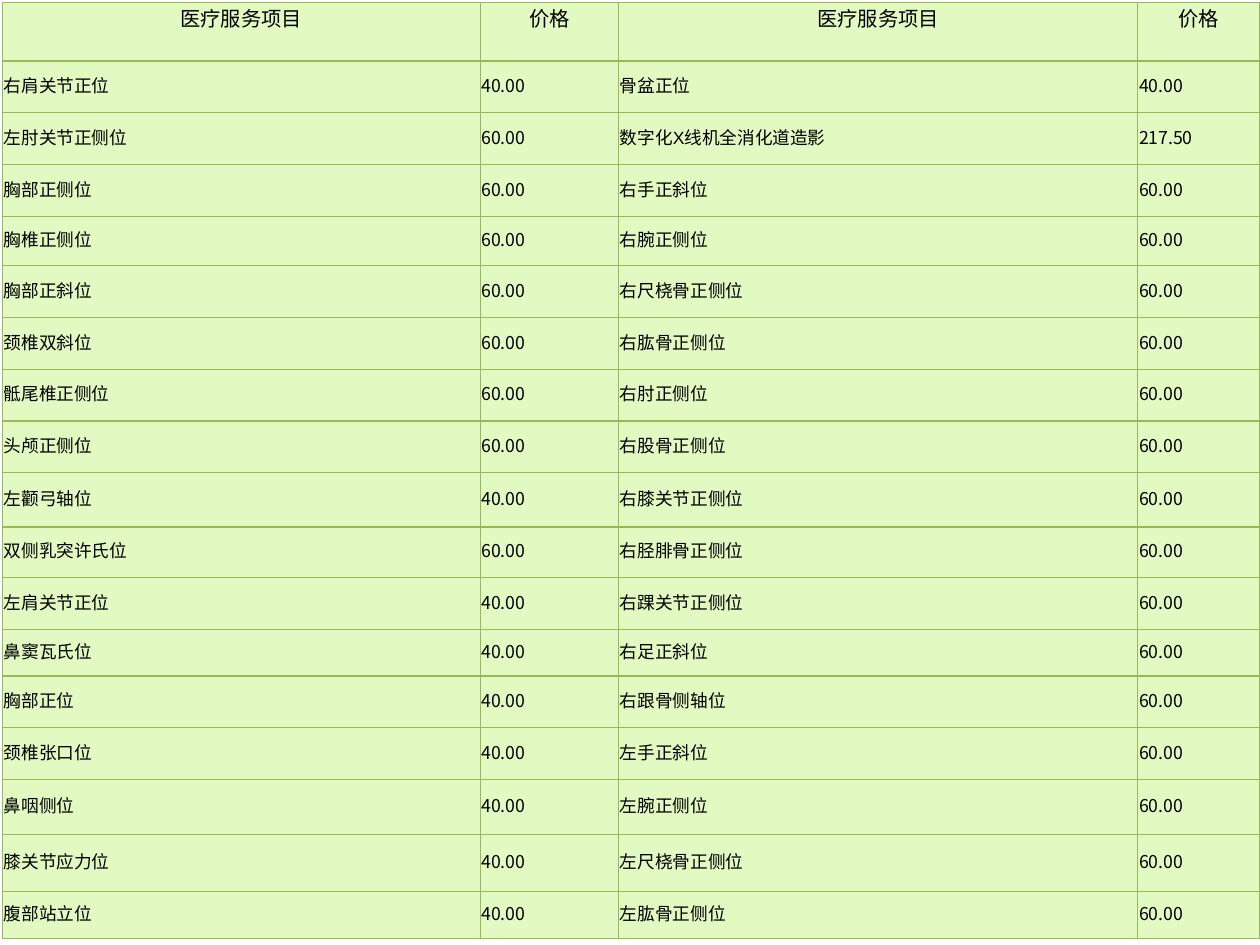
"""Build a price list slide for X-ray examinations."""
from dataclasses import dataclass

from lxml import etree
from pptx import Presentation
from pptx.dml.color import RGBColor
from pptx.enum.text import MSO_ANCHOR, PP_ALIGN
from pptx.oxml.ns import qn
from pptx.util import Pt

CENTER, LEFT = PP_ALIGN.CENTER, PP_ALIGN.LEFT
TOP, MIDDLE = MSO_ANCHOR.TOP, MSO_ANCHOR.MIDDLE
BLANK_LAYOUT = 6

HEADINGS = ("医疗服务项目", "价格") * 2
PRICES = [
    ("右肩关节正位", "40.00", "骨盆正位", "40.00"),
    ("左肘关节正侧位", "60.00", "数字化X线机全消化道造影", "217.50"),
    ("胸部正侧位", "60.00", "右手正斜位", "60.00"),
    ("胸椎正侧位", "60.00", "右腕正侧位", "60.00"),
    ("胸部正斜位", "60.00", "右尺桡骨正侧位", "60.00"),
    ("颈椎双斜位", "60.00", "右肱骨正侧位", "60.00"),
    ("骶尾椎正侧位", "60.00", "右肘正侧位", "60.00"),
    ("头颅正侧位", "60.00", "右股骨正侧位", "60.00"),
    ("左颧弓轴位", "40.00", "右膝关节正侧位", "60.00"),
    ("双侧乳突许氏位", "60.00", "右胫腓骨正侧位", "60.00"),
    ("左肩关节正位", "40.00", "右踝关节正侧位", "60.00"),
    ("鼻窦瓦氏位", "40.00", "右足正斜位", "60.00"),
    ("胸部正位", "40.00", "右跟骨侧轴位", "60.00"),
    ("颈椎张口位", "40.00", "左手正斜位", "60.00"),
    ("鼻咽侧位", "40.00", "左腕正侧位", "60.00"),
    ("膝关节应力位", "40.00", "左尺桡骨正侧位", "60.00"),
    ("腹部站立位", "40.00", "左肱骨正侧位", "60.00"),
]
COLUMN_WIDTHS = (272.9, 79.2, 296.6, 69.8)
REGULAR_HEIGHT = 29.6
SPECIAL_HEIGHTS = {0: 33.4, 4: 28.1, 9: 31, 10: 28.8, 12: 26.8, 15: 31.5, 16: 32.4, 17: 26.8}


@dataclass(frozen=True)
class Theme:
    """Colours, fonts and sizes of the slide."""
    ink: str = "000000"
    cell: str = "E2FAC2"
    border: str = "98B955"
    border_width: float = 0.75
    heading_size: float = 11.6
    body_size: float = 10.1
    heading_font: str = "Calibri"
    item_font: str = "Arial"
    price_font: str = "Noto Sans CJK SC"
    east_asian_font: str = "Noto Sans CJK SC"


def write_text(text_frame, text, *, size, font, east_asian_font, color, align):
    """Write one formatted paragraph into a text frame."""
    paragraph = text_frame.paragraphs[0]
    paragraph.alignment = align
    run = paragraph.add_run()
    run.text = text
    run.font.size = Pt(size)
    run.font.name = font
    run.font.color.rgb = RGBColor.from_string(color)
    properties = run.font._element
    etree.SubElement(properties, qn("a:ea")).set("typeface", east_asian_font)


class SlideBuilder:
    """Hold the theme and the current slide."""

    def __init__(self, slide, theme):
        """Keep the slide and its theme."""
        self.slide = slide
        self.theme = theme

    def add_borders(self, cell):
        """Draw a line on all four sides of a cell."""
        properties = cell._tc.get_or_add_tcPr()
        for side in ("lnL", "lnR", "lnT", "lnB"):
            line = etree.SubElement(properties, qn(f"a:{side}"), w=str(Pt(self.theme.border_width)))
            fill = etree.SubElement(line, qn("a:solidFill"))
            etree.SubElement(fill, qn("a:srgbClr"), val=self.theme.border)

    def add_cell(self, cell, text, margins, anchor, **text_format):
        """Format one cell and write its text."""
        self.add_borders(cell)
        cell.fill.solid()
        cell.fill.fore_color.rgb = RGBColor.from_string(self.theme.cell)
        cell.margin_left, cell.margin_top, cell.margin_right, cell.margin_bottom = map(Pt, margins)
        cell.vertical_anchor = anchor
        write_text(cell.text_frame, text, color=self.theme.ink,
                   east_asian_font=self.theme.east_asian_font, **text_format)

    def add_price_table(self, left, top, headings, prices, widths, heights):
        """Add the table with a heading row and price rows."""
        theme = self.theme
        shape = self.slide.shapes.add_table(len(heights), len(widths), Pt(left), Pt(top),
                                            Pt(sum(widths)), Pt(sum(heights)))
        table = shape.table
        for column, width in zip(table.columns, widths):
            column.width = Pt(width)
        for row, height in zip(table.rows, heights):
            row.height = Pt(height)
        for column, text in enumerate(headings):
            self.add_cell(table.cell(0, column), text, (0, 0, 0, 0), TOP,
                          size=theme.heading_size, font=theme.heading_font, align=CENTER)
        for row, values in enumerate(prices, start=1):
            for column, text in enumerate(values):
                font = theme.price_font if column % 2 else theme.item_font
                self.add_cell(table.cell(row, column), text, (0.7, 0.7, 0.7, 2.9), MIDDLE,
                              size=theme.body_size, font=font, align=LEFT)


def main():
    """Build and save the presentation."""
    presentation = Presentation()
    presentation.slide_width, presentation.slide_height = Pt(720), Pt(540)
    slide = presentation.slides.add_slide(presentation.slide_layouts[BLANK_LAYOUT])
    heights = [SPECIAL_HEIGHTS.get(row, REGULAR_HEIGHT) for row in range(len(PRICES) + 1)]
    builder = SlideBuilder(slide, Theme())
    builder.add_price_table(1.5, 1.5, HEADINGS, PRICES, COLUMN_WIDTHS, heights)
    presentation.save("out.pptx")


if __name__ == "__main__":
    main()
